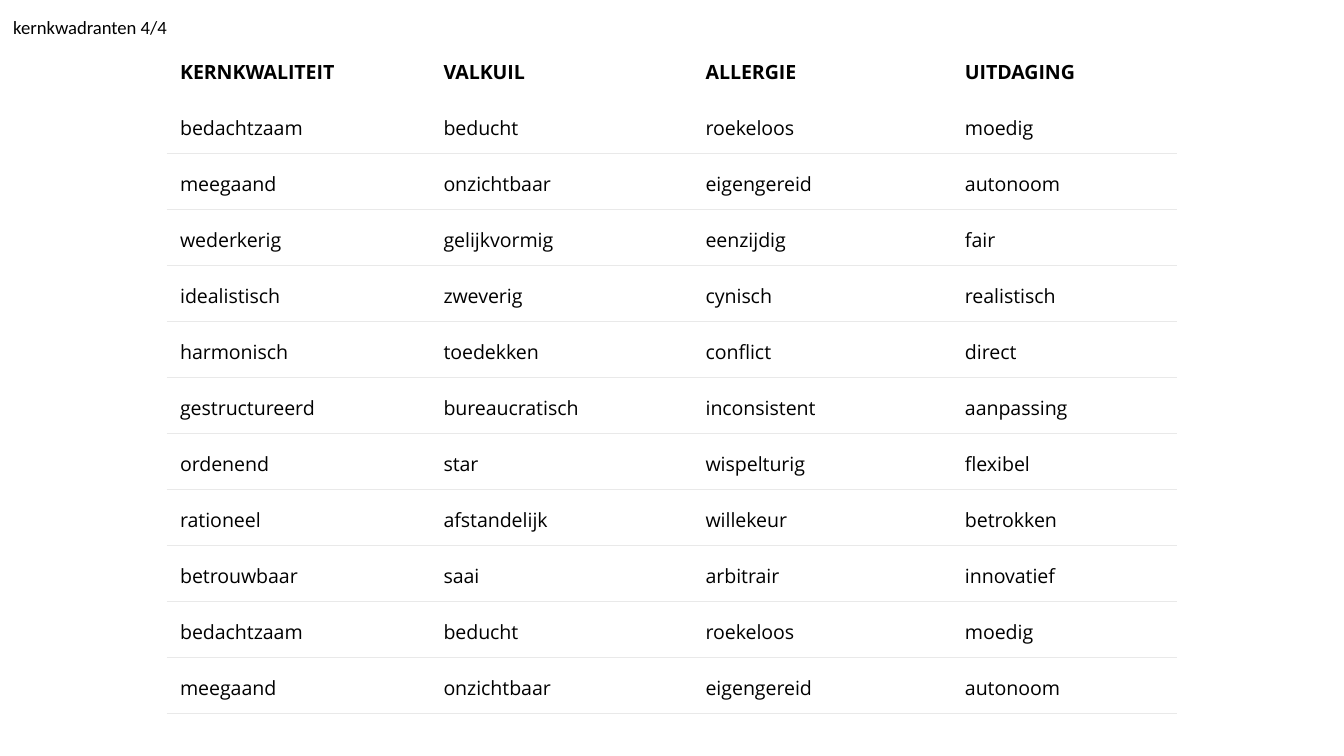
from lxml.etree import SubElement
from pptx import Presentation
from pptx.dml.color import RGBColor
from pptx.enum.text import MSO_ANCHOR
from pptx.oxml.ns import qn
from pptx.util import Inches, Pt

COLORS = {"paper": "FFFFFF", "ink": "000000", "rule": "E9E9E9"}
COLUMN_WIDTHS = [1.96, 1.95, 1.93, 1.68]
HEADINGS = ["KERNKWALITEIT", "VALKUIL", "ALLERGIE", "UITDAGING"]
CAREFUL = ["bedachtzaam", "beducht", "roekeloos", "moedig"]
COMPLIANT = ["meegaand", "onzichtbaar", "eigengereid", "autonoom"]
QUADRANTS = [
    CAREFUL,
    COMPLIANT,
    ["wederkerig", "gelijkvormig", "eenzijdig", "fair"],
    ["idealistisch", "zweverig", "cynisch", "realistisch"],
    ["harmonisch", "toedekken", "conflict", "direct"],
    ["gestructureerd", "bureaucratisch", "inconsistent", "aanpassing"],
    ["ordenend", "star", "wispelturig", "flexibel"],
    ["rationeel", "afstandelijk", "willekeur", "betrokken"],
    ["betrouwbaar", "saai", "arbitrair", "innovatief"],
    CAREFUL,
    COMPLIANT,
]


def set_margins(target, bottom=0.1):
    """Give a cell or text frame its inner margins."""
    for side in ("left", "right", "top"):
        setattr(target, f"margin_{side}", Inches(0.1))
    target.margin_bottom = Inches(bottom)


def write(frame, text, font, size, bold=False):
    """Write one styled run into the first paragraph of a text frame."""
    para = frame.paragraphs[0]
    para.line_spacing = 1.15
    span = para.add_run()
    span.text = text
    span.font.name = font
    span.font.size = Pt(size)
    span.font.bold = bold
    span.font.color.rgb = RGBColor.from_string(COLORS["ink"])
    return para


def set_borders(cell, ruled_sides):
    """Rule the named sides of a cell and clear the others."""
    properties = cell._tc.get_or_add_tcPr()
    for side in "LRTB":
        line = SubElement(properties, qn(f"a:ln{side}"), w=str(Pt(0.75)))
        if side in ruled_sides:
            fill = SubElement(line, qn("a:solidFill"))
            SubElement(fill, qn("a:srgbClr"), val=COLORS["rule"])
        else:
            SubElement(line, qn("a:noFill"))


def add_title(page, left, top, width, height):
    """Place the page title in the given box."""
    box = page.shapes.add_textbox(*map(Inches, (left, top, width, height)))
    frame = box.text_frame
    frame.word_wrap = True
    set_margins(frame)
    para = write(frame, "kernkwadranten 4/4", "Calibri", 10)
    para.space_after = Pt(12)


def add_quadrant_table(page, left, top, width, height):
    """Place the table of core quadrants in the given box."""
    rows = [HEADINGS] + QUADRANTS
    box = page.shapes.add_table(
        len(rows), len(HEADINGS), *map(Inches, (left, top, width, height)))
    table = box.table
    table.first_row = False
    table.horz_banding = False
    for column, column_width in zip(table.columns, COLUMN_WIDTHS):
        column.width = Inches(column_width)
    for index, words in enumerate(rows):
        table.rows[index].height = Inches(height / len(rows))
        ruled_sides = ("", "B")[index] if index < 2 else "TB"
        for cell, word in zip(table.rows[index].cells, words):
            set_margins(cell, bottom=0.09)
            cell.vertical_anchor = MSO_ANCHOR.TOP
            set_borders(cell, ruled_sides)
            cell.fill.solid()
            cell.fill.fore_color.rgb = RGBColor.from_string(COLORS["paper"])
            write(cell.text_frame, word, "Open Sans", 10.5, bold=index == 0)


def main():
    """Build the deck and save it."""
    deck = Presentation()
    deck.slide_width = Inches(10)
    deck.slide_height = deck.slide_width * 9 // 16
    page = deck.slides.add_slide(deck.slide_layouts[6])
    add_quadrant_table(page, 1.24, 0.31, sum(COLUMN_WIDTHS), 5)
    add_title(page, 0, 0, 3.28, 0.37)
    deck.save("out.pptx")


if __name__ == "__main__":
    main()
